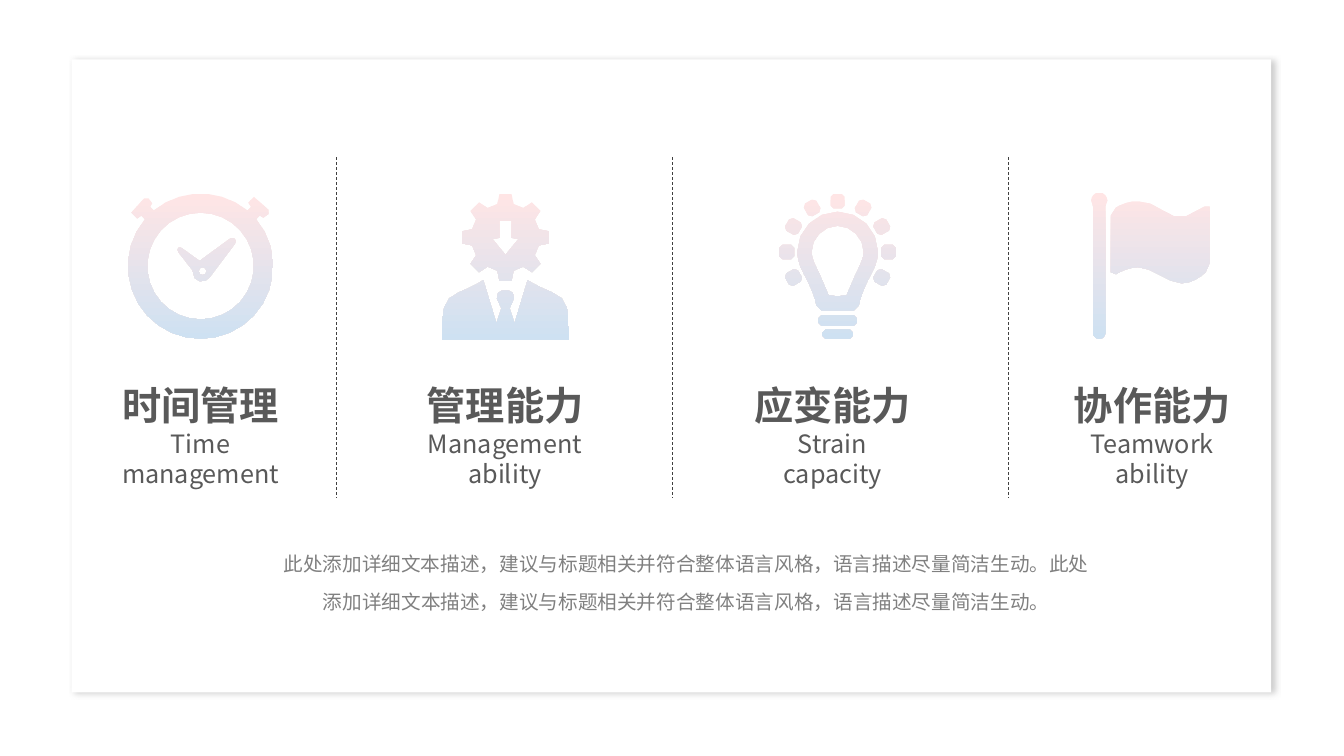
from math import sin, cos, radians
from lxml import etree
from pptx import Presentation, util as u
from pptx.dml.color import RGBColor
from pptx.enum import shapes, text, dml
from pptx.oxml.ns import qn

W, H = 13.333, 7.5
FONT = "Noto Sans CJK JP"
SKILLS = [
    ("时间管理", "Time management", 1.99, 2.3),
    ("管理能力", "Management ability", 5.01, 2.39),
    ("应变能力", "Strain capacity", 8.26, 1.86),
    ("协作能力", "Teamwork ability", 11.43, 2.18),
]
NOTE = "此处添加详细文本描述，建议与标题相关并符合整体语言风格，语言描述尽量简洁生动。"
WRAP = 1.62

HANDS = [(2.28, 2.37), (2.31, 2.35, 2.36, 2.37, 2.33, 2.42), (2.08, 2.75),
         (2.04, 2.81, 1.91, 2.82, 1.91, 2.68), (1.77, 2.5),
         (1.75, 2.47, 1.78, 2.44, 1.8, 2.46), (1.98, 2.59)]
EAR = [(-.06, .72), (-.06, .77), (-.11, .78), (-.11, .86),
       (.08, .87), (.11, .84), (.1, .78), (.06, .77), (.06, .72)]
TOOTH = [(-.08, .33), (-.06, .43), (.06, .43), (.08, .33)]
ARROW = [(0, 2.53), (.13, 2.37), (.06, 2.36), (.06, 2.19), (0, 2.19)]
SUIT = [(0, 3.37), (.63, 3.37), (.63, 3.1, .63, 2.96, .46, 2.9),
        (.31, 2.84, .22, 2.78, .22, 2.78), (.09, 3.21), (.04, 3.06),
        (.15, 2.89, .03, 2.88, 0, 2.88)]
BULB = [(0, 2.1), (.22, 2.1, .4, 2.28, .4, 2.5), (.4, 2.6, .35, 2.69, .3, 2.78),
        (.26, 2.87, .22, 2.95, .21, 3.03), (.16, 3.08), (0, 3.08)]
GLASS = [(0, 2.24), (.14, 2.24, .26, 2.36, .26, 2.5), (.26, 2.56, .22, 2.64, .18, 2.72),
         (.09, 2.93), (0, 2.94)]
POLE = [(0, 1.91), (.05, 1.91, .08, 1.95, .08, 1.99), (.06, 2.05), (.06, 3.3),
        (.06, 3.33, .04, 3.36, 0, 3.36)]
CLOTH = [(11.3, 2), (11.41, 2.02), (11.6, 2.1, 11.66, 2.26, 11.95, 2.05),
         (12, 2.05), (12, 2.61), (11.96, 2.7),
         (11.91, 2.75, 11.82, 2.81, 11.72, 2.81), (11.57, 2.8, 11.43, 2.65, 11.29, 2.65),
         (11.21, 2.65, 11.12, 2.69, 11.07, 2.72), (11.02, 2.7),
         (11.02, 2.14), (11.07, 2.06), (11.12, 2.03, 11.21, 1.99, 11.29, 2)]


def trace(path, steps=4):
    pts = []
    for seg in path:
        if len(seg) == 2:
            pts.append(seg)
            continue
        nodes = [pts[-1], seg[:2], seg[2:4], seg[4:]]
        for i in range(1, steps + 1):
            t = i / steps
            wts = ((1 - t) ** 3, 3 * t * (1 - t) ** 2, 3 * t * t * (1 - t), t ** 3)
            pts.append(tuple(sum(w * n[k] for w, n in zip(wts, nodes)) for k in (0, 1)))
    return pts


def mirror(path, mid):
    half = trace(path)
    return [(mid + x, y) for x, y in half] + [(mid - x, y) for x, y in half[-2:0:-1]]


def spin(pts, mid, deg):
    s, c = sin(radians(deg)), cos(radians(deg))
    return [(mid[0] + x * c + y * s, mid[1] + x * s - y * c) for x, y in pts]


def arc(mid, r, start=0, end=360, step=12):
    n = round((end - start) / step)
    return [spin([(0, r)], mid, start + (end - start) * i / n)[0] for i in range(n + 1)]


def pill(mid, w, h, cut):
    a, b = w / 2, h / 2
    pts = [(a - cut, b), (a, b - cut), (a, cut - b), (a - cut, -b)]
    pts += [(-x, -y) for x, y in pts]
    return [(mid[0] + x, mid[1] + y) for x, y in pts]


def clock():
    mid = (1.99, 2.64)
    rim = (arc(mid, .72, 50, 310) + spin(EAR, mid, -45)
           + arc(mid, .72, -40, 40) + spin(EAR, mid, 45))
    return [rim, arc(mid, .53), trace(HANDS), arc((2.01, 2.69), .04, step=45)]


def boss():
    hub = (5.015, 2.355)
    gear = [p for k in range(8) for p in spin(TOOTH, hub, 45 * k)]
    return [gear, mirror(ARROW, hub[0]), mirror(SUIT, hub[0])]


def lamp():
    mid = (8.31, 2.5)
    rays = [spin(pill((0, .505), .14, .145, .03), mid, d) for d in range(-120, 121, 30)]
    return rays + [mirror(BULB, mid[0]), mirror(GLASS, mid[0]),
                   pill((mid[0], 3.18), .38, .1, .03), pill((mid[0], 3.315), .3, .09, .03)]


def flag():
    return [mirror(POLE, 10.905), trace(CLOTH)]


def rgb(code):
    return RGBColor.from_string(code)


def icon(slide, loops):
    grid = [[(x * 1000, y * 1000) for x, y in loop] for loop in loops]
    pen = slide.shapes.build_freeform(*grid[0][0], scale=914.4)
    for i, loop in enumerate(grid):
        if i:
            pen.move_to(*loop[0])
        pen.add_line_segments(loop[1:], close=True)
    form = pen.convert_to_shape()
    form.shadow.inherit = False
    form.line.fill.background()
    form.fill.gradient()
    form.fill.gradient_angle = 270
    for stop, code, pos in zip(form.fill.gradient_stops, ("FFE5E5", "CEE1F2"), (0, 1)):
        stop.color.rgb = rgb(code)
        stop.position = pos


def write(slide, box, lines, pad=.1, gap=None):
    frame = slide.shapes.add_textbox(*map(u.Inches, box)).text_frame
    frame.word_wrap = True
    frame.margin_left = frame.margin_right = u.Inches(pad)
    for i, (words, size, bold, code) in enumerate(lines):
        para = frame.add_paragraph() if i else frame.paragraphs[0]
        para.alignment = text.PP_ALIGN.CENTER
        para.line_spacing = gap
        run = para.add_run()
        run.text = words
        font = run.font
        font.size, font.bold, font.name = u.Pt(size), bold, FONT
        font.color.rgb = rgb(code)
        etree.SubElement(font._element, qn("a:ea"), typeface=FONT)


def card(slide):
    box = slide.shapes.add_shape(shapes.MSO_SHAPE.RECTANGLE,
                                 *map(u.Inches, (.71, .59, 11.9, 6.28)))
    box.shadow.inherit = False
    box.fill.solid()
    box.fill.fore_color.rgb = rgb("FFFFFF")
    box.line.fill.background()
    glow = etree.SubElement(box._element.spPr.find(qn("a:effectLst")), qn("a:outerShdw"),
                            blurRad=str(u.Pt(4)), dist=str(u.Pt(3)),
                            dir=str(24 * 60000), algn="tl", rotWithShape="0")
    tint = etree.SubElement(glow, qn("a:srgbClr"), val="808080")
    etree.SubElement(tint, qn("a:alpha"), val="40000")


def rule(slide, x):
    line = slide.shapes.add_connector(shapes.MSO_CONNECTOR.STRAIGHT,
                                      *map(u.Inches, (x, 1.56, x, 4.94)))
    line.line.color.rgb = rgb("404040")
    line.line.width = u.Pt(.5)
    line.line.dash_style = dml.MSO_LINE.DASH
    etree.SubElement(line._element.spPr, qn("a:effectLst"))


def main():
    deck = Presentation()
    deck.slide_width, deck.slide_height = u.Inches(W), u.Inches(H)
    slide = deck.slides.add_slide(deck.slide_layouts[6])
    card(slide)
    for k in (1, 2, 3):
        rule(slide, W * k / 4)
    for draw in (clock, flag, boss, lamp):
        icon(slide, draw())
    for name, sub, mid, wide in SKILLS:
        write(slide, (mid - wide / 2, 3.73, wide, .88),
              [(name, 28, True, "595959"), (sub, 18, False, "595959")], (wide - WRAP) / 2)
    write(slide, (2.7, 5.29, 8.22, .85), [(NOTE * 2, 14, False, "808080")], gap=1.6)
    deck.save("out.pptx")


if __name__ == "__main__":
    main()
